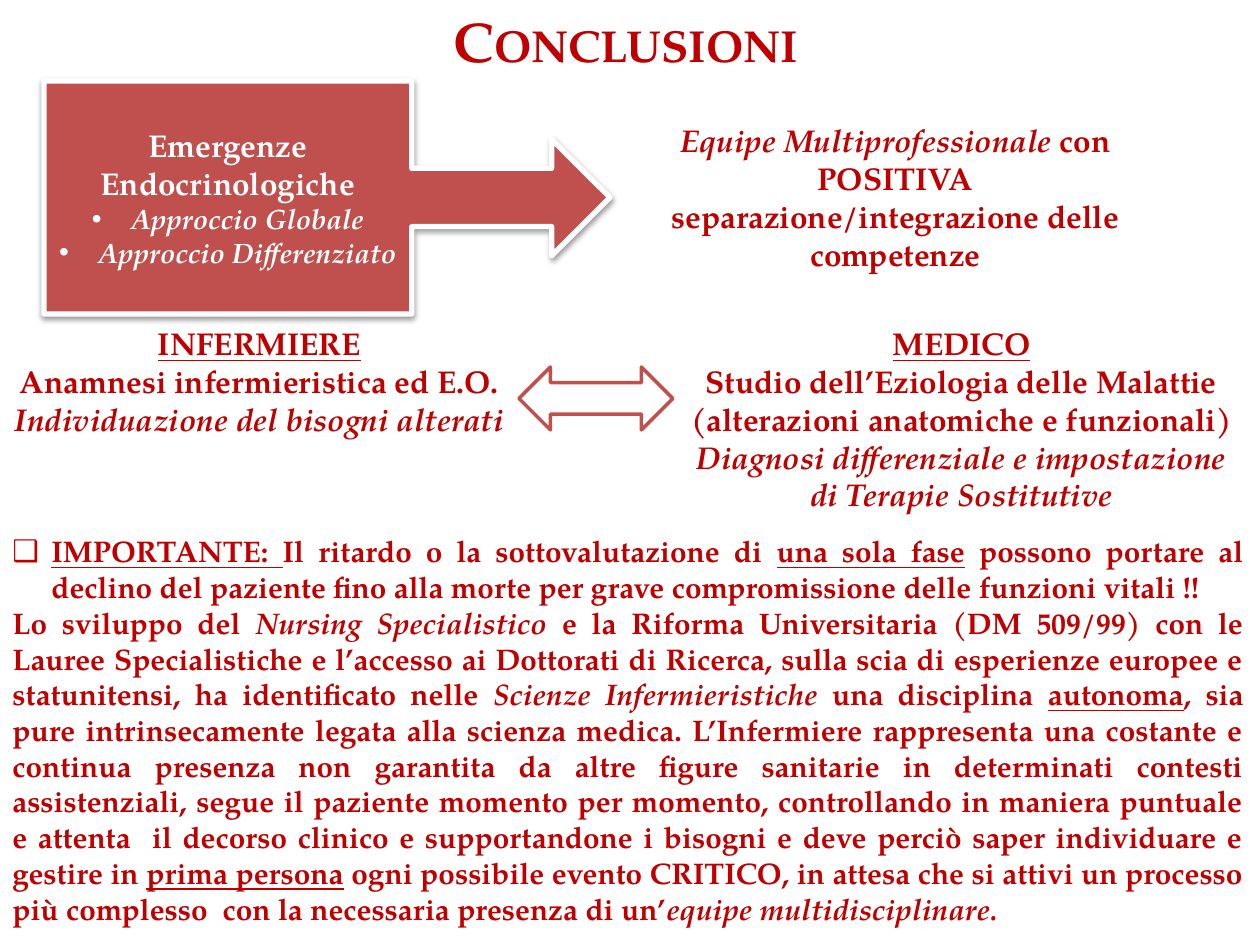
from dataclasses import dataclass
from typing import NamedTuple

from lxml import etree
from pptx import Presentation
from pptx.dml.color import RGBColor
from pptx.enum.shapes import MSO_SHAPE
from pptx.enum.text import MSO_ANCHOR, MSO_AUTO_SIZE, PP_ALIGN
from pptx.oxml.ns import qn
from pptx.util import Emu, Pt

CENTER, JUSTIFY = PP_ALIGN.CENTER, PP_ALIGN.JUSTIFY
TOP, MIDDLE = MSO_ANCHOR.TOP, MSO_ANCHOR.MIDDLE
GROW, FIXED = MSO_AUTO_SIZE.SHAPE_TO_FIT_TEXT, MSO_AUTO_SIZE.NONE
CALLOUT, DOUBLE_ARROW = MSO_SHAPE.RIGHT_ARROW_CALLOUT, MSO_SHAPE.LEFT_RIGHT_ARROW

PX_PER_INCH = 126
FONT = "TeX Gyre Pagella"
COLORS = {"text": "C00000", "accent": "C0504D", "white": "FFFFFF", "shadow": "000000"}
STYLES = {
    "plain": {"italic": False, "underline": False},
    "italic": {"italic": True, "underline": False},
    "underline": {"italic": False, "underline": True},
}


class Box(NamedTuple):
    left: int
    top: int
    width: int
    height: int


class Run(NamedTuple):
    text: str
    style: str = "plain"


@dataclass
class Para:
    runs: list[Run]
    size: int = 18
    align: PP_ALIGN = CENTER
    bullet: str = ""


@dataclass
class TextBlock:
    box: Box
    paras: list[Para]


@dataclass
class Arrow:
    kind: MSO_SHAPE
    box: Box
    fill: str
    line: str
    weight: int


TITLE = TextBlock(Box(-4, 0, 1260, 81), [Para([Run("Conclusioni")], 32)])

EMERGENCIES = [
    Para([Run("Emergenze Endocrinologiche")]),
    Para([Run("Approccio Globale", "italic")], 16, bullet="•"),
    Para([Run("Approccio Differenziato", "italic")], 16, bullet="•"),
]

BLOCKS = [
    TextBlock(Box(626, 115, 539, 165), [
        Para([
            Run("Equipe Multiprofessionale", "italic"),
            Run(" con POSITIVA separazione/integrazione delle competenze"),
        ]),
    ]),
    TextBlock(Box(-10, 318, 539, 127), [
        Para([Run("INFERMIERE", "underline")]),
        Para([Run("Anamnesi infermieristica ed E.O.")]),
        Para([Run("Individuazione del bisogni alterati", "italic")]),
    ]),
    TextBlock(Box(668, 318, 587, 204), [
        Para([Run("MEDICO", "underline")]),
        Para([Run("Studio dell’Eziologia delle Malattie")]),
        Para([Run("(alterazioni anatomiche e funzionali)")]),
        Para([Run("Diagnosi differenziale e impostazione di Terapie Sostitutive", "italic")]),
    ]),
    TextBlock(Box(0, 527, 1256, 410), [
        Para([
            Run("IMPORTANTE: ", "underline"),
            Run("Il ritardo o la sottovalutazione di "),
            Run("una sola fase", "underline"),
            Run(" possono portare al declino del paziente fino alla morte per grave "
                "compromissione delle funzioni vitali !!"),
        ], 17, JUSTIFY, "❑"),
        Para([
            Run("Lo sviluppo del "),
            Run("Nursing Specialistico", "italic"),
            Run(" e la Riforma Universitaria (DM 509/99) con le Lauree Specialistiche e "
                "l’accesso ai Dottorati di Ricerca, sulla scia di esperienze europee e "
                "statunitensi, ha identificato nelle "),
            Run("Scienze Infermieristiche", "italic"),
            Run(" una disciplina "),
            Run("autonoma", "underline"),
            Run(", sia pure intrinsecamente legata alla scienza medica. L’Infermiere "
                "rappresenta una costante e continua presenza non garantita da altre figure "
                "sanitarie in determinati contesti assistenziali, segue il paziente momento "
                "per momento, controllando in maniera puntuale e attenta  il decorso clinico "
                "e supportandone i bisogni e deve perciò saper individuare e gestire in "),
            Run("prima persona", "underline"),
            Run(" ogni possibile evento CRITICO, in attesa che si attivi un processo più "
                "complesso  con la necessaria presenza di un’"),
            Run("equipe multidisciplinare.", "italic"),
        ], 17, JUSTIFY),
    ]),
]

CALLOUT_ARROW = Arrow(CALLOUT, Box(44, 81, 566, 233), "accent", "white", 3)
EXCHANGE_ARROW = Arrow(DOUBLE_ARROW, Box(519, 367, 154, 63), "white", "accent", 2)


def px(n: int) -> Emu:
    return Emu(round(n * 914400 / PX_PER_INCH))


def rgb(name: str) -> RGBColor:
    return RGBColor.from_string(COLORS[name])


def place(sp, box: Box) -> None:
    for name, value in box._asdict().items():
        setattr(sp, name, px(value))


def add_bullet(p, char: str) -> None:
    pPr = p._p.get_or_add_pPr()
    indent = px(39)
    pPr.set("marL", str(indent))
    pPr.set("indent", str(-indent))
    etree.SubElement(pPr, qn("a:buFont")).set("typeface", "Arial")
    etree.SubElement(pPr, qn("a:buChar")).set("char", char)


def fill_text(sp, paras: list[Para], color: str = "text", anchor=TOP, auto_size=GROW) -> None:
    tf = sp.text_frame
    frame = {"word_wrap": True, "vertical_anchor": anchor, "auto_size": auto_size}
    for name, value in frame.items():
        setattr(tf, name, value)
    for i, para in enumerate(paras):
        p = tf.add_paragraph() if i else tf.paragraphs[0]
        p.alignment = para.align
        if para.bullet:
            add_bullet(p, para.bullet)
        for run in para.runs:
            r = p.add_run()
            r.text = run.text
            fmt = {"name": FONT, "size": Pt(para.size), "bold": True, **STYLES[run.style]}
            for name, value in fmt.items():
                setattr(r.font, name, value)
            r.font.color.rgb = rgb(color)


def add_text(s, block: TextBlock) -> None:
    sp = s.shapes.add_textbox(*map(px, block.box))
    fill_text(sp, block.paras)


def add_arrow(s, arrow: Arrow):
    sp = s.shapes.add_shape(arrow.kind, *map(px, arrow.box))
    sp.shadow.inherit = False
    sp.fill.solid()
    sp.fill.fore_color.rgb = rgb(arrow.fill)
    sp.line.color.rgb = rgb(arrow.line)
    sp.line.width = Pt(arrow.weight)
    return sp


def add_shadow(sp) -> None:
    effects = sp._element.spPr.find(qn("a:effectLst"))
    shadow = etree.SubElement(effects, qn("a:outerShdw"), blurRad="40000", dist="20000",
                              dir="5400000", rotWithShape="0")
    color = etree.SubElement(shadow, qn("a:srgbClr"), val=COLORS["shadow"])
    etree.SubElement(color, qn("a:alpha"), val="38000")


def main() -> None:
    prs = Presentation()
    prs.slide_width, prs.slide_height = px(1260), px(945)
    s = prs.slides.add_slide(prs.slide_layouts[5])

    title = s.shapes.title
    place(title, TITLE.box)
    fill_text(title, TITLE.paras)
    title.text_frame.paragraphs[0].runs[0].font._element.set("cap", "small")

    callout = add_arrow(s, CALLOUT_ARROW)
    add_shadow(callout)
    fill_text(callout, EMERGENCIES, "white", MIDDLE, FIXED)

    *upper, conclusion = BLOCKS
    for block in upper:
        add_text(s, block)
    add_arrow(s, EXCHANGE_ARROW)
    add_text(s, conclusion)
    prs.save("out.pptx")


if __name__ == "__main__":
    main()
